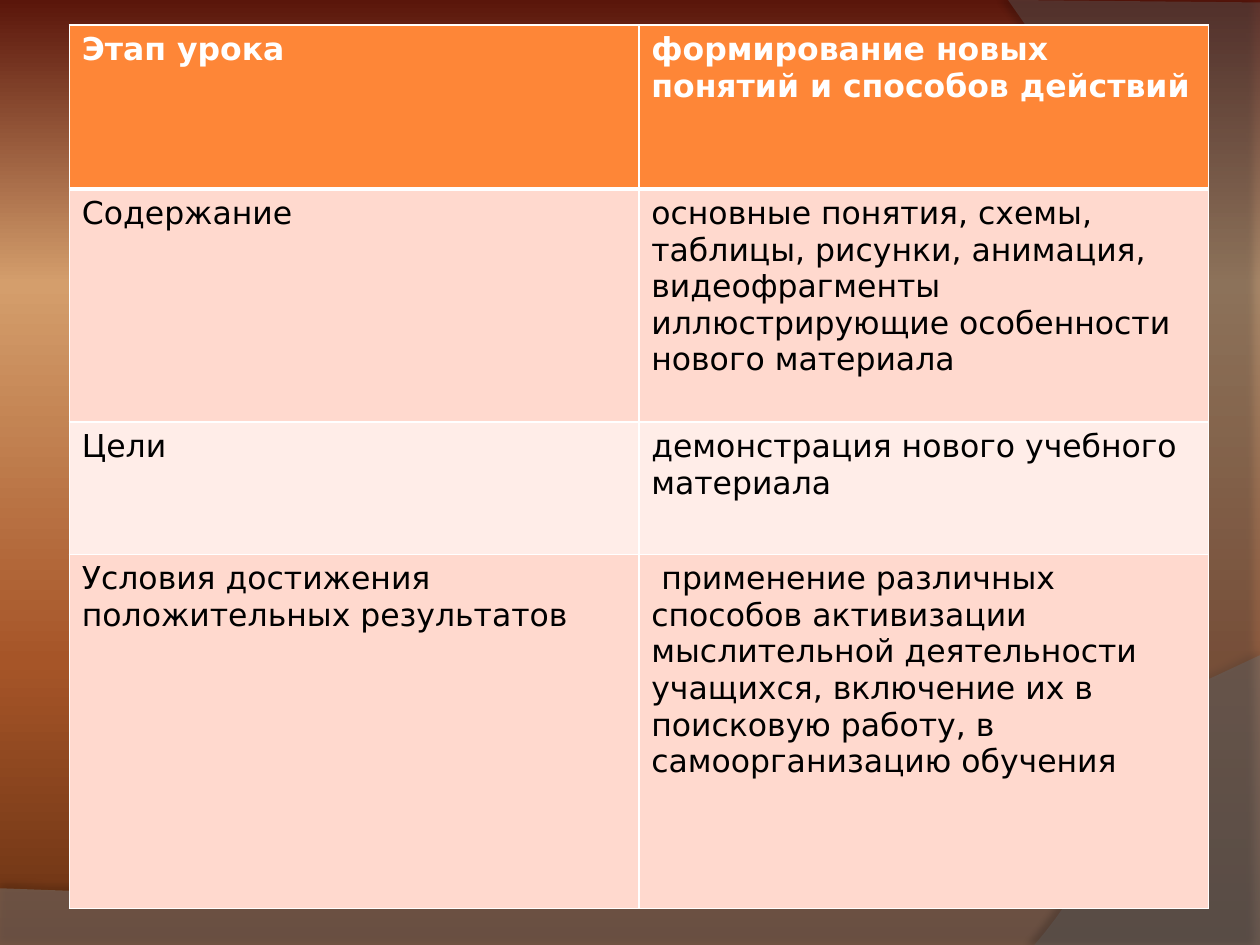
import pptx
import pptx.dml.color
import pptx.util
from lxml import etree
from pptx.oxml.ns import qn
from pptx.util import Inches

FONT = "DejaVu Sans"
WHITE, BLACK = "FFFFFF", "000000"
HEADER_FILL = "FE8637"
BAND_FILLS = ["FFD9CE", "FFEDE8"]

LESSON_STAGE = [
    ("Этап урока", "формирование новых понятий и способов действий"),
    ("Содержание",
     "основные понятия, схемы, таблицы, рисунки, анимация, видеофрагменты "
     "иллюстрирующие особенности нового материала"),
    ("Цели", "демонстрация нового учебного материала"),
    ("Условия достижения положительных результатов",
     "применение различных способов активизации мыслительной деятельности "
     "учащихся, включение их в поисковую работу, в самоорганизацию обучения"),
]
ROW_HEIGHTS = [1.3, 1.85, 1.05, 2.81]
TABLE_LEFT, TABLE_TOP, COLUMN_WIDTH = 0.55, 0.2, 4.52
FIRST_LINE_INDENT = 0.08

BACKGROUND_STOPS = [(0, "5A160B"), (30, "D49E6C"), (70, "A65528"), (100, "663012")]

# Each wave is a Bezier curve closed by straight edges through the corners.
WAVES = [
    dict(curve=[(10, 5.2), (5.59, 7.29), (3.91, 7.19), (0, 7.05)],
         corners=[(0, 7.51), (10, 7.51)], fill="7F7F7F", opacity=45,
         shadow=dict(opacity=35, blur=4, distance=3.5, angle=270)),
    dict(curve=[(8.21, 7.5), (9.35, 6.19), (10.18, 3), (8, 0)],
         corners=[(10, 0.02), (10, 7.5)], fill="5E5E5E", opacity=40,
         shadow=dict(opacity=45, blur=4, distance=4, angle=180)),
]
CURVE_STEPS = 40


def rgb(color):
    return pptx.dml.color.RGBColor.from_string(color)


def add_xml(parent, tag, **attributes):
    child = etree.SubElement(parent, qn(tag))
    for name, value in attributes.items():
        child.set(name, str(value))
    return child


def add_color(parent, color, opacity=100):
    node = add_xml(parent, "a:srgbClr", val=color)
    if opacity < 100:
        add_xml(node, "a:alpha", val=opacity * 1000)


def paint_background(slide):
    slide.background.fill.gradient()
    gradient = slide.element.find(".//" + qn("a:gradFill"))
    for child in list(gradient):
        gradient.remove(child)
    stops = add_xml(gradient, "a:gsLst")
    for position, color in BACKGROUND_STOPS:
        add_color(add_xml(stops, "a:gs", pos=position * 1000), color)
    add_xml(gradient, "a:lin", ang=90 * 60000, scaled=0)


def bezier_points(curve):
    """Return points along a cubic Bezier curve, both ends included."""
    points = []
    for step in range(CURVE_STEPS + 1):
        t = step / CURVE_STEPS
        weights = [(1 - t) ** 3, 3 * t * (1 - t) ** 2, 3 * t ** 2 * (1 - t), t ** 3]
        points.append(tuple(sum(w * p[axis] for w, p in zip(weights, curve))
                            for axis in (0, 1)))
    return points


def add_wave(slide, curve, corners, fill, opacity, shadow):
    outline = [(Inches(x), Inches(y)) for x, y in bezier_points(curve) + corners]
    builder = slide.shapes.build_freeform(*outline[0])
    builder.add_line_segments(outline[1:], close=True)
    wave = builder.convert_to_shape()
    wave.fill.solid()
    wave.fill.fore_color.rgb = rgb(fill)
    add_xml(wave.element.spPr.find(".//" + qn("a:srgbClr")), "a:alpha", val=opacity * 1000)
    wave.line.fill.background()
    wave.shadow.inherit = False
    outer = add_xml(wave.element.spPr.find(qn("a:effectLst")), "a:outerShdw",
                    blurRad=pptx.util.Pt(shadow["blur"]),
                    dist=pptx.util.Pt(shadow["distance"]),
                    dir=shadow["angle"] * 60000, rotWithShape=0)
    add_color(outer, BLACK, shadow["opacity"])


def set_borders(cell, top, bottom):
    """Draw white borders; top and bottom are widths in points."""
    properties = cell._tc.get_or_add_tcPr()
    widths = [("a:lnL", 1), ("a:lnR", 1), ("a:lnT", top), ("a:lnB", bottom)]
    for index, (side, width) in enumerate(widths):
        line = add_xml(properties, side, w=pptx.util.Pt(width))
        add_color(add_xml(line, "a:solidFill"), WHITE)
        properties.insert(index, line)


def add_stage_table(slide):
    table = slide.shapes.add_table(
        len(LESSON_STAGE), 2, Inches(TABLE_LEFT), Inches(TABLE_TOP),
        Inches(2 * COLUMN_WIDTH), Inches(sum(ROW_HEIGHTS))).table
    for column in table.columns:
        column.width = Inches(COLUMN_WIDTH)
    for row, (texts, height) in enumerate(zip(LESSON_STAGE, ROW_HEIGHTS)):
        table.rows[row].height = Inches(height)
        is_header = row == 0
        for column, text in enumerate(texts):
            cell = table.cell(row, column)
            cell.fill.solid()
            cell.fill.fore_color.rgb = rgb(HEADER_FILL if is_header
                                           else BAND_FILLS[(row - 1) % 2])
            set_borders(cell, top=3 if row == 1 else 1, bottom=3 if is_header else 1)
            cell.text_frame.text = text
            font = cell.text_frame.paragraphs[0].runs[0].font
            font.name = FONT
            font.size = pptx.util.Pt(18)
            font.bold = is_header
            font.color.rgb = rgb(WHITE if is_header else BLACK)
    conditions = table.cell(len(LESSON_STAGE) - 1, 1).text_frame.paragraphs[0]
    conditions._p.get_or_add_pPr().set("indent", str(Inches(FIRST_LINE_INDENT)))


def main():
    presentation = pptx.Presentation()
    presentation.slide_width, presentation.slide_height = Inches(10), Inches(7.5)
    slide = presentation.slides.add_slide(presentation.slide_layouts[6])
    paint_background(slide)
    for wave in WAVES:
        add_wave(slide, **wave)
    add_stage_table(slide)
    presentation.save("out.pptx")


if __name__ == "__main__":
    main()
